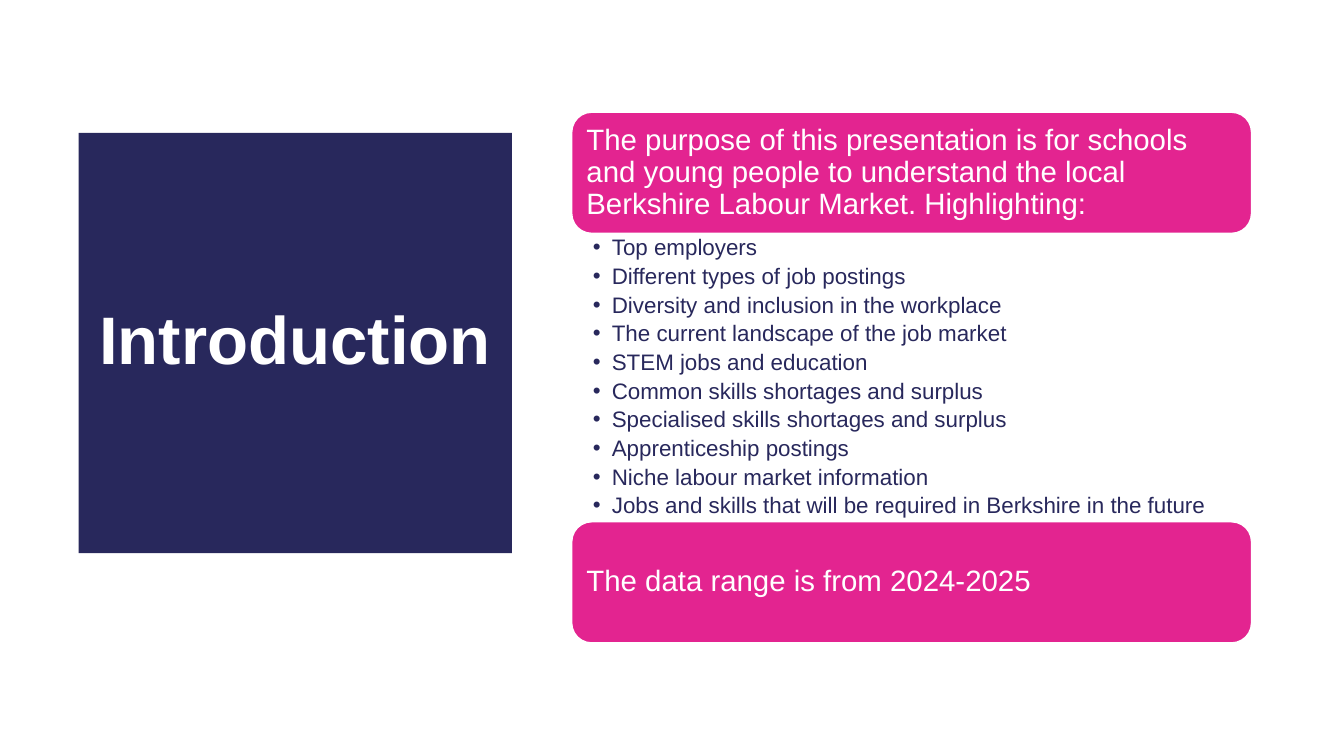
from pptx import Presentation
from pptx.dml.color import RGBColor
from pptx.enum.shapes import MSO_SHAPE as Shape
from pptx.enum.text import MSO_ANCHOR as Anchor, MSO_AUTO_SIZE as Fit, PP_ALIGN as Align
from pptx.oxml.xmlchemy import OxmlElement as Element
from pptx.util import Cm, Pt

NAVY = RGBColor(0x28, 0x28, 0x5C)
PINK = RGBColor(0xE3, 0x24, 0x90)
WHITE = RGBColor(0xFF, 0xFF, 0xFF)

TOPICS = [
    "Top employers",
    "Different types of job postings",
    "Diversity and inclusion in the workplace",
    "The current landscape of the job market",
    "STEM jobs and education",
    "Common skills shortages and surplus",
    "Specialised skills shortages and surplus",
    "Apprenticeship postings",
    "Niche labour market information",
    "Jobs and skills that will be required in Berkshire in the future",
]


def write(frame, *lines, font="Arial", size=21, color=WHITE, bold=False,
          align=Align.LEFT, anchor=Anchor.MIDDLE, after=0, pads=(0.23,) * 4):
    frame.word_wrap = True
    frame.auto_size = Fit.NONE
    frame.vertical_anchor = anchor
    frame.margin_left, frame.margin_top, frame.margin_right, frame.margin_bottom = map(Cm, pads)
    for num, line in enumerate(lines):
        para = frame.add_paragraph() if num else frame.paragraphs[0]
        para.alignment = align
        para.line_spacing = 0.9
        para.space_before = Pt(0)
        para.space_after = Pt(after)
        run = para.add_run()
        run.text = line
        run.font.name = font
        run.font.size = Pt(size)
        run.font.bold = bold
        run.font.color.rgb = color


class Page:
    def __init__(self, deck):
        self.slide = deck.slides.add_slide(deck.slide_layouts[1])
        self.left, self.width = 14.4, 17.15

    def place(self, item, left, top, width, height):
        item.left, item.top, item.width, item.height = map(Cm, (left, top, width, height))

    def title(self, text, *box):
        item = self.slide.shapes.title
        self.place(item, *box)
        item.fill.solid()
        item.fill.fore_color.rgb = NAVY
        write(item.text_frame, text, size=48, bold=True, align=Align.CENTER)

    def list(self, lines, top, height):
        item = self.slide.placeholders[1]
        self.place(item, self.left, top, self.width, height)
        write(item.text_frame, *lines, size=16, color=NAVY, anchor=Anchor.TOP,
              after=3.2, pads=(0.54, 0.07, 0.4, 0.07))
        for para in item.text_frame.paragraphs:
            props = para._p.get_or_add_pPr()
            props.set("marL", str(Cm(0.48)))
            props.set("indent", str(Cm(-0.48)))
            dot = Element("a:buChar")
            dot.set("char", "•")
            props.append(dot)

    def panel(self, text, top, height):
        box = map(Cm, (self.left, top, self.width, height))
        item = self.slide.shapes.add_shape(Shape.ROUNDED_RECTANGLE, *box)
        item.shadow.inherit = False
        item.fill.solid()
        item.fill.fore_color.rgb = PINK
        item.line.color.rgb = WHITE
        item.line.width = Pt(1.5)
        write(item.text_frame, text)


def main():
    deck = Presentation()
    deck.slide_width, deck.slide_height = Cm(33.87), Cm(19.05)
    page = Page(deck)
    top, tall, gap = 2.82, 3.07, 7.25
    page.title("Introduction", 1.98, 3.35, 10.92, 10.59)
    page.panel("The purpose of this presentation is for schools and young people "
               "to understand the local Berkshire Labour Market. Highlighting:", top, tall)
    page.list(TOPICS, top + tall, gap)
    page.panel("The data range is from 2024-2025", top + tall + gap, tall)
    deck.save("out.pptx")


if __name__ == "__main__":
    main()
